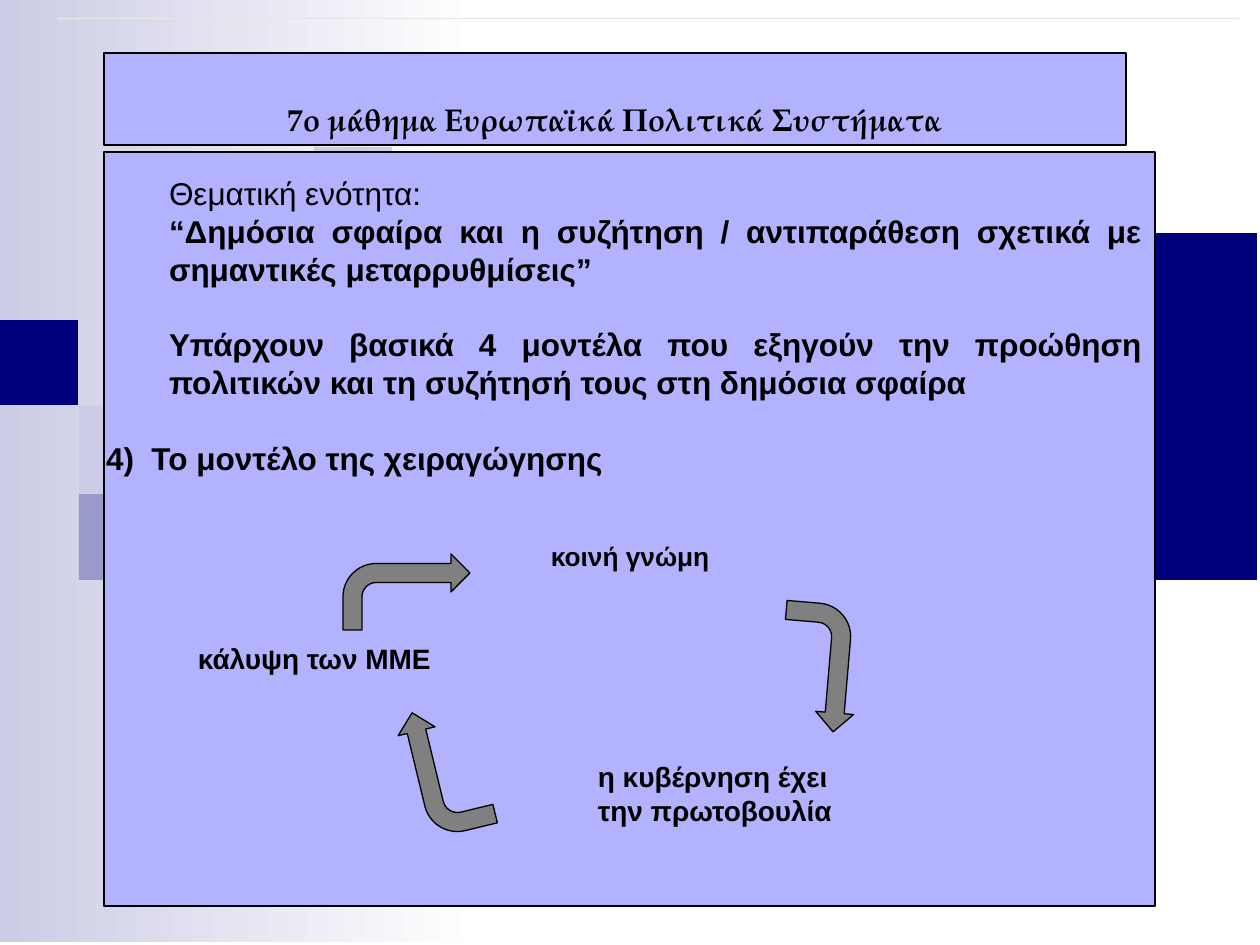
from pptx import Presentation
from pptx.dml.color import RGBColor
from pptx.enum.shapes import MSO_SHAPE
from pptx.enum.text import MSO_ANCHOR, MSO_AUTO_SIZE, PP_ALIGN
from pptx.util import Emu, Pt

SCALE = 914400 / 126
COLOURS = {
    "navy": "00007D", "lilac": "9999CC", "mist": "CCCCE6", "panel": "B2B2FF",
    "rule": "E6E6E6", "grey": "808080", "black": "000000", "white": "FFFFFF",
}
DECOR = [
    ((236, 233, 1021, 347), "navy"),
    ((79, 494, 77, 86), "lilac"),
    ((314, 147, 78, 86), "mist"),
    ((0, 320, 78, 85), "navy"),
    ((79, 406, 77, 87), "mist"),
]
BODY = [
    ("Θεματική ενότητα:", False, 63, 0),
    ("“Δημόσια σφαίρα και η συζήτηση / αντιπαράθεση σχετικά με σημαντικές μεταρρυθμίσεις”", True, 63, 0),
    ("Υπάρχουν βασικά 4 μοντέλα που εξηγούν την προώθηση πολιτικών "
     "και τη συζήτησή τους στη δημόσια σφαίρα", True, 63, 38),
    ("4)\u00a0 Το μοντέλο της χειραγώγησης", True, 0, 38),
]
LABELS = [
    ((185, 629, 263, 59), "κάλυψη των ΜΜΕ", 16),
    ((538, 527, 286, 57), "κοινή γνώμη", 15),
    ((585, 747, 263, 93), "η κυβέρνηση έχει την πρωτοβουλία", 16),
]
ARROWS = [((756, 629), 94.9), ((343, 554), 0), ((382, 732), 256.4)]


def px(length):
    """Turn a length in px into EMU."""
    return Emu(round(length * SCALE))


def colour(name):
    """Look up a named colour."""
    return RGBColor.from_string(COLOURS[name])


def paint(shape, fill, outlined=False):
    """Give a shape a solid fill and an optional thin black outline."""
    shape.fill.solid()
    shape.fill.fore_color.rgb = colour(fill)
    if outlined:
        shape.line.color.rgb = colour("black")
        shape.line.width = Pt(0.75)
    else:
        shape.line.fill.background()


def add_block(page, bounds, fill, outlined=False, kind=MSO_SHAPE.RECTANGLE):
    """Add a flat preset shape."""
    shape = page.shapes.add_shape(kind, *map(px, bounds))
    shape.shadow.inherit = False
    paint(shape, fill, outlined)
    return shape


def add_fade(page):
    """Add the gradient band on the left."""
    band = add_block(page, (0, 0, 480, 942), "mist")
    band.fill.gradient()
    band.fill.gradient_angle = 0
    for stop, name, position in zip(band.fill.gradient_stops, ("mist", "white"), (0, 1)):
        stop.color.rgb = colour(name)
        stop.position = position


def add_span(para, text, size, bold=True, font="Arial"):
    """Add one formatted run to a paragraph."""
    span = para.add_run()
    span.text = text
    span.font.name = font
    span.font.size = Pt(size)
    span.font.bold = bold
    span.font.color.rgb = colour("black")


def add_box(page, bounds):
    """Add a wrapping text box and return its frame."""
    frame = page.shapes.add_textbox(*map(px, bounds)).text_frame
    frame.word_wrap = True
    frame.margin_left = frame.margin_right = px(13)
    frame.margin_top = frame.margin_bottom = px(13)
    return frame


def place_title(page):
    """Format the title placeholder and bring it to the front."""
    title = page.shapes.title
    title.left, title.top, title.width, title.height = map(px, (104, 53, 1022, 92))
    paint(title, "panel", True)
    frame = title.text_frame
    frame.auto_size = MSO_AUTO_SIZE.NONE
    frame.word_wrap = True
    frame.vertical_anchor = MSO_ANCHOR.BOTTOM
    frame.margin_bottom = px(7)
    para = frame.paragraphs[0]
    para.alignment = PP_ALIGN.CENTER
    add_span(para, "7ο μάθημα Ευρωπαϊκά Πολιτικά Συστήματα", 18, font="TeX Gyre Pagella")
    title.element.getparent().append(title.element)


def add_body(page):
    """Add the justified introduction."""
    frame = add_box(page, (93, 161, 1062, 730))
    for index, (text, bold, indent, gap) in enumerate(BODY):
        para = frame.add_paragraph() if index else frame.paragraphs[0]
        para.alignment = PP_ALIGN.JUSTIFY
        para.space_before = px(gap)
        properties = para._p.get_or_add_pPr()
        properties.set("marL", str(px(indent)))
        properties.set("indent", "0")
        add_span(para, text, 18, bold)


def add_arrow(page, corner, angle):
    """Add one bent arrow of the cycle."""
    arrow = add_block(page, (*corner, 127, 76), "grey", True, MSO_SHAPE.BENT_ARROW)
    for index, value in enumerate((0.25, 0.25, 0.25, 0.44)):
        arrow.adjustments[index] = value
    arrow.rotation = angle


def main():
    """Build the slide and save it."""
    deck = Presentation()
    deck.slide_width, deck.slide_height = px(1260), px(945)
    page = deck.slides.add_slide(deck.slide_layouts[5])
    add_fade(page)
    for bounds, fill in DECOR:
        add_block(page, bounds, fill)
    add_block(page, (104, 152, 1051, 754), "panel", True)
    add_block(page, (57, 18, 1182, 1), "rule")
    place_title(page)
    add_body(page)
    for bounds, text, size in LABELS:
        add_span(add_box(page, bounds).paragraphs[0], text, size)
    for corner, angle in ARROWS:
        add_arrow(page, corner, angle)
    deck.save("out.pptx")


if __name__ == "__main__":
    main()
